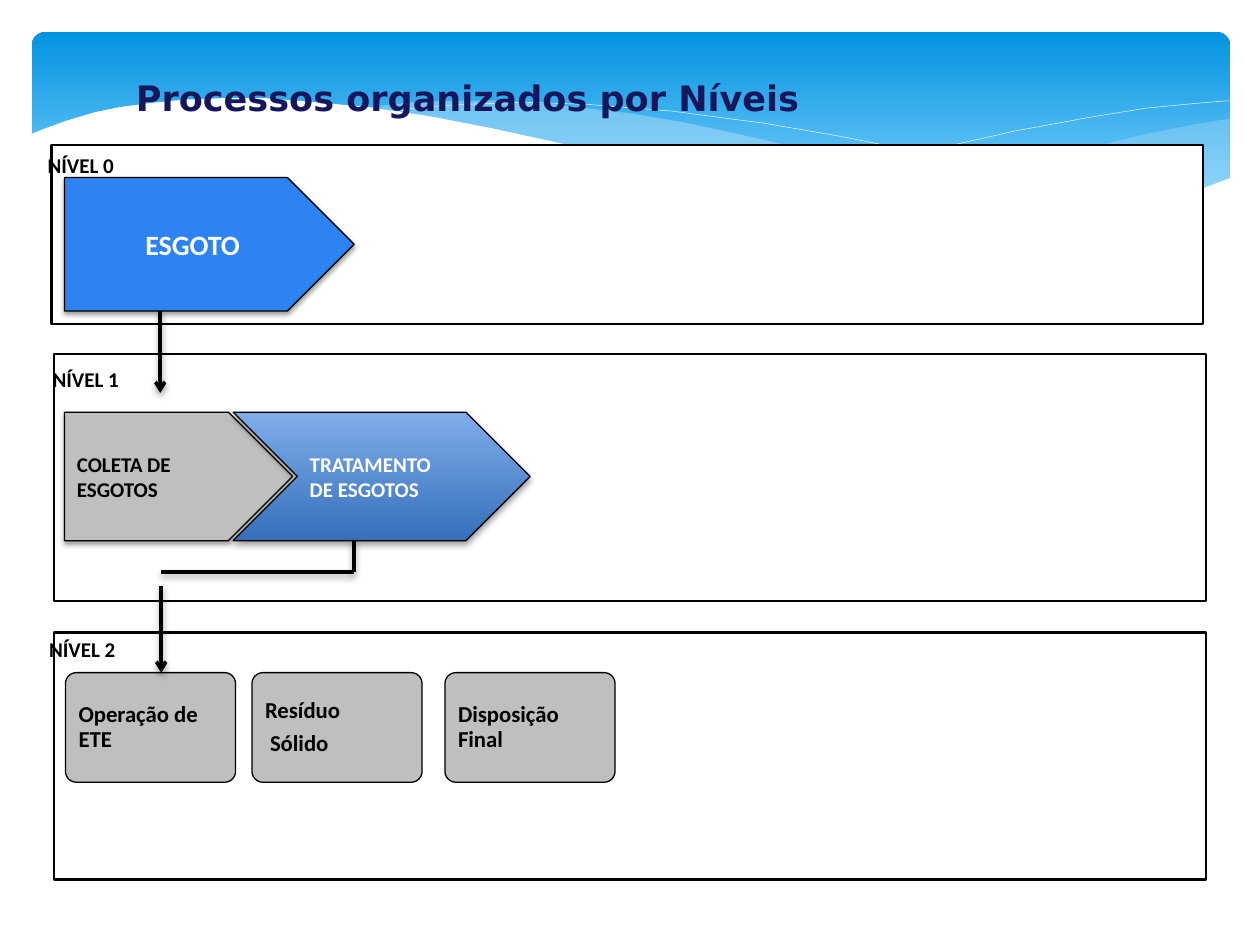
from dataclasses import dataclass
from lxml import etree
from pptx import Presentation
from pptx import util as u
from pptx.dml.color import RGBColor
from pptx.enum import shapes, text
from pptx.oxml.ns import qn

Cm, Pt = u.Cm, u.Pt
Kind = shapes.MSO_SHAPE


@dataclass(frozen=True)
class Theme:
    black: str = "000000"
    white: str = "FFFFFF"
    navy: str = "16165D"
    blue: str = "2D83F4"
    grey: str = "BFBFBF"
    mist: str = "C6E7FC"
    sky: tuple = (("0293E0", 0), ("83D3FE", 0.9))
    steel: tuple = (("80ACEA", 0), ("3570BA", 1))
    body: str = "Calibri"
    head: str = "DejaVu Sans"
    title: int = 20
    main: int = 16
    step: int = 13
    label: int = 12


theme = Theme()
deck = Presentation()
deck.slide_width, deck.slide_height = Cm(25.4), Cm(19.05)
slide = deck.slides.add_slide(deck.slide_layouts[6])
pen = slide.shapes


def paint(shape, fill=None, width=0, line=theme.black):
    """Fill with a colour, a pair of gradient stops or nothing."""
    shape.shadow.inherit = False
    if fill is None:
        shape.fill.background()
    elif isinstance(fill, str):
        shape.fill.solid()
        shape.fill.fore_color.rgb = RGBColor.from_string(fill)
    else:
        shape.fill.gradient()
        shape.fill.gradient_angle = 270
        for stop, (tone, place) in zip(shape.fill.gradient_stops, fill):
            stop.color.rgb = RGBColor.from_string(tone)
            stop.position = place
    if width:
        shape.line.width = Pt(width)
        shape.line.color.rgb = RGBColor.from_string(line)
    else:
        shape.line.fill.background()


def write(shape, words, size, tone=theme.black, font=theme.body,
          align=text.PP_ALIGN.LEFT):
    frame = shape.text_frame
    frame.word_wrap = True
    frame.text = words
    for para in frame.paragraphs:
        para.alignment = align
        for run in para.runs:
            run.font.name, run.font.size, run.font.bold = font, Pt(size), True
            run.font.color.rgb = RGBColor.from_string(tone)


# Header band
band = pen.add_shape(Kind.ROUNDED_RECTANGLE, Cm(0.64), Cm(0.64), Cm(24.16), Cm(3.96))
band.adjustments[0] = 0.07
paint(band, theme.sky)

# Waves: fill, opacity in percent, outline points in cm
right = [(24.79, 2.39), (24.08, 2.51), (23.01, 2.72), (21.87, 3), (20.45, 3.33),
         (19.13, 3.63), (17.93, 3.86), (16.79, 4.06), (17.91, 4.19), (19.23, 4.32),
         (20.4, 4.37), (21.44, 4.34), (22.38, 4.24), (23.19, 4.11), (23.93, 3.91),
         (24.79, 3.58)]
middle = [(22.68, 4.24), (21.26, 4.04), (19.69, 3.78), (17.93, 3.4), (15.98, 2.95),
          (14.83, 2.69), (13.74, 2.46), (12.75, 2.29), (11.23, 2.11), (10.13, 2.03),
          (9.17, 2.03), (8.33, 2.06), (7.26, 2.18), (8.69, 2.39), (10.26, 2.69),
          (11.4, 2.95), (13.46, 3.43), (15.27, 3.81), (16.89, 4.09), (18.34, 4.27),
          (19.63, 4.37), (20.78, 4.39), (21.77, 4.34)]
fall = [(7.85, 2.29), (8.33, 2.18), (9.22, 2.11), (10.57, 2.06), (11.91, 2.11),
        (13.54, 2.24), (15.44, 2.49), (16.89, 2.74), (18.47, 3.05), (20.19, 3.45),
        (22.07, 3.94), (23.04, 4.22)]
rise = [(15.57, 3.84), (16.59, 3.58), (17.65, 3.3), (19, 2.97), (20.47, 2.64),
        (22, 2.36), (23.11, 2.18), (24.16, 2.08), (24.77, 2.03)]
front = [(24.82, 3.58), (24.13, 3.84), (23.37, 4.04), (22.53, 4.22), (21.59, 4.32),
         (20.55, 4.34), (19.33, 4.32), (17.98, 4.19), (16.46, 3.96), (14.71, 3.66),
         (12.78, 3.25), (11.35, 2.9), (9.93, 2.59), (8.64, 2.34), (7.42, 2.16),
         (6.35, 2.06), (5.36, 1.98), (4.5, 1.98), (3.71, 2.01), (3.02, 2.08),
         (2.41, 2.16), (1.93, 2.26), (1.32, 2.44), (0.91, 2.59), (0.58, 2.72),
         (0.58, 5.69), (24.82, 5.69)]
for fill, alpha, spots in ((theme.mist, 29, right), (theme.mist, 40, middle),
                           (None, 100, fall), (None, 100, rise),
                           (theme.white, 100, front)):
    spots = [(Cm(x), Cm(y)) for x, y in spots]
    path = pen.build_freeform(*spots[0])
    path.add_line_segments(spots[1:], close=fill is not None)
    wave = path.convert_to_shape()
    paint(wave, fill, 0 if fill else 0.25, theme.white)
    if alpha < 100:
        tint = wave._element.spPr.find(".//" + qn("a:srgbClr"))
        etree.SubElement(tint, qn("a:alpha")).set("val", str(alpha * 1000))

# Level panels
for left, top, height in ((1.04, 2.92, 3.61), (1.09, 7.14, 4.98), (1.09, 12.75, 4.98)):
    panel = pen.add_shape(Kind.RECTANGLE, Cm(left), Cm(top), Cm(23.22), Cm(height))
    paint(panel, theme.white, 1.25)

# Title and level labels
title = pen.add_textbox(Cm(2.49), Cm(1.42), Cm(19.99), Cm(1.12))
write(title, "Processos organizados por Níveis", theme.title, theme.navy, theme.head)
for level, (left, top) in enumerate(((0.71, 2.95), (0.81, 7.26), (0.74, 12.7))):
    label = pen.add_textbox(Cm(left), Cm(top), Cm(2.41), Cm(0.76))
    write(label, f"NÍVEL {level}", theme.label)

# Process arrows of levels 0 and 1
raised = []
mid, start = text.PP_ALIGN.CENTER, text.PP_ALIGN.LEFT
for kind, words, area, fill, size, tone, align, blur in (
    (Kind.PENTAGON, "ESGOTO", (1.3, 3.58, 5.84, 2.69),
     theme.blue, theme.main, theme.white, mid, 3.1),
    (Kind.PENTAGON, "COLETA DE ESGOTOS", (1.3, 8.31, 4.6, 2.59),
     theme.grey, theme.label, theme.black, start, 3.1),
    (Kind.CHEVRON, "TRATAMENTO DE ESGOTOS", (4.7, 8.31, 5.99, 2.59),
     theme.steel, theme.label, theme.white, start, 4),
):
    arrow = pen.add_shape(kind, *map(Cm, area))
    paint(arrow, fill, 0.75)
    write(arrow, words, size, tone, align=align)
    arrow.text_frame.vertical_anchor = text.MSO_ANCHOR.MIDDLE
    raised.append((arrow, blur))

# Steps of level 2
for words, left in (("Operação de ETE", 1.32), ("Resíduo\nSólido", 5.08),
                    ("Disposição Final", 8.97)):
    step = pen.add_shape(Kind.ROUNDED_RECTANGLE, Cm(left), Cm(13.56), Cm(3.43), Cm(2.21))
    step.adjustments[0] = 0.1
    paint(step, theme.grey, 0.75)
    write(step, words, theme.step)
    frame = step.text_frame
    frame.vertical_anchor = text.MSO_ANCHOR.MIDDLE
    frame.margin_left = frame.margin_right = Cm(0.2)
    frame.margin_top = frame.margin_bottom = Cm(0.2)
    for row, para in enumerate(frame.paragraphs):
        para.line_spacing, para.space_after = 0.9, Pt(5)
        if row:
            para._p.get_or_add_pPr().set("marL", str(Cm(0.1)))

# Links between levels
for ends, tip in (((3.25, 11.81, 3.25, 13.56), True), ((3.25, 11.53, 7.14, 11.53), False),
                  ((7.14, 10.9, 7.14, 11.53), False), ((3.23, 6.27, 3.23, 7.92), True)):
    link = pen.add_connector(shapes.MSO_CONNECTOR.STRAIGHT, *map(Cm, ends))
    link.line.width = Pt(2)
    link.line.color.rgb = RGBColor.from_string(theme.black)
    if tip:
        etree.SubElement(link.line._get_or_add_ln(), qn("a:tailEnd")).set("type", "arrow")
    etree.SubElement(link._element.spPr, qn("a:effectLst"))
    raised.append((link, 4))

# Soft shadows below arrows and links
for shape, blur in raised:
    cast = etree.SubElement(shape._element.spPr.find(qn("a:effectLst")), qn("a:outerShdw"),
                            blurRad=str(Pt(blur)), dist=str(Pt(blur / 2)),
                            dir="5400000", rotWithShape="0")
    shade = etree.SubElement(cast, qn("a:srgbClr"), val=theme.black)
    etree.SubElement(shade, qn("a:alpha"), val="38000")

deck.save("out.pptx")
